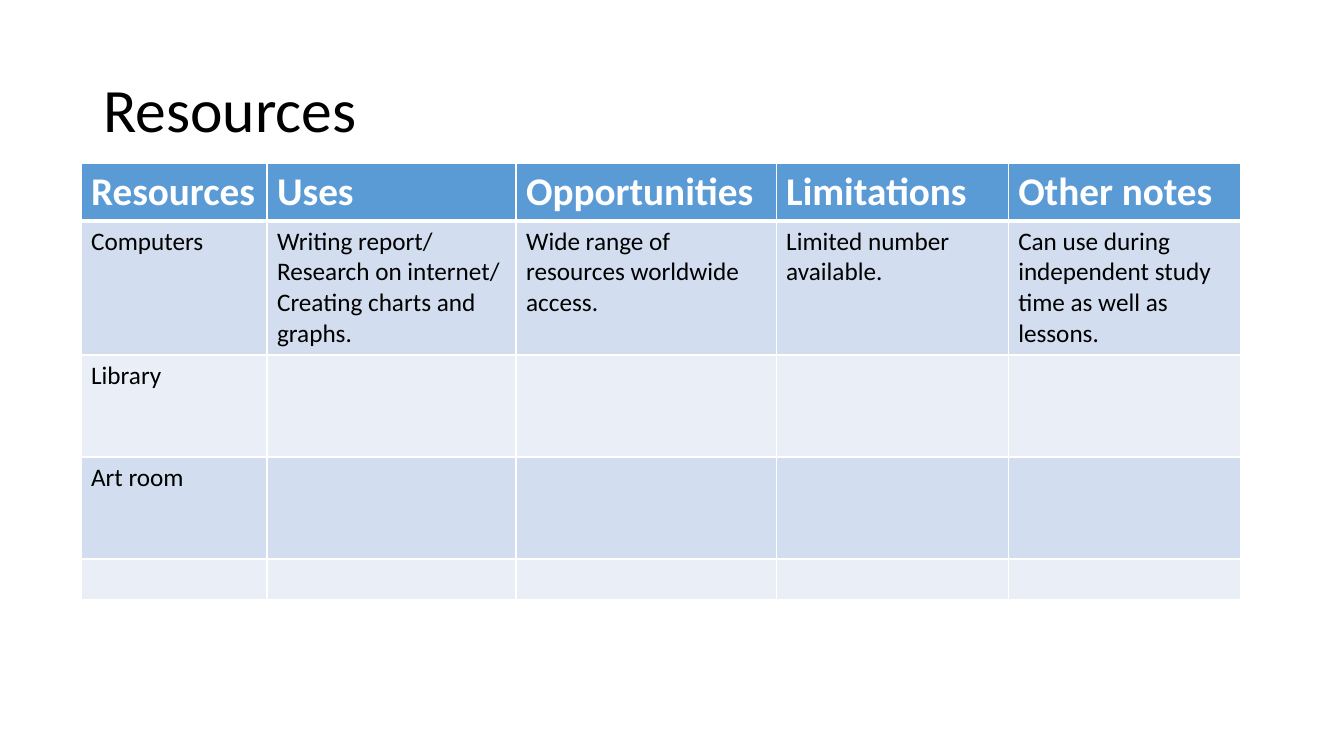
"""Build the Resources slide: a title above a table of resources."""
from lxml import etree
from pptx import Presentation
from pptx import util as u
from pptx.dml.color import RGBColor
from pptx.enum import text
from pptx.oxml import ns

PX = 9071.43
WHITE, BLACK, BLUE = "FFFFFF", "000000", "5B9BD5"
BANDS = ["D2DEEF", "EAEFF7"]


def paint(fill, color):
    fill.solid()
    fill.fore_color.rgb = RGBColor.from_string(color)


def write(frame, words, size=18, color=BLACK, bold=False, space=1.0):
    para = frame.paragraphs[0]
    para.alignment = text.PP_ALIGN.LEFT
    para.line_spacing = space
    para.font.size = u.Pt(size)
    if words:
        run = para.add_run()
        run.text = words
        run.font.name = "Calibri"
        run.font.size = u.Pt(size)
        run.font.bold = bold
        paint(run.font.fill, color)


deck = Presentation()
deck.slide_width, deck.slide_height = u.Inches(13.33), u.Inches(7.5)
slide = deck.slides.add_slide(deck.slide_layouts[5])

title = slide.shapes.title
title.left, title.top, title.width, title.height = [round(n * PX) for n in (93, 40, 1159, 146)]
title.text_frame.vertical_anchor = text.MSO_ANCHOR.MIDDLE
write(title.text_frame, "Resources", size=44, space=0.9)

rows = [
    ["Resources", "Uses", "Opportunities", "Limitations", "Other notes"],
    ["Computers",
     "Writing report/ Research on internet/ Creating charts and graphs.",
     "Wide range of resources worldwide access.",
     "Limited number available.",
     "Can use during independent study time as well as lessons."],
    ["Library"] + [""] * 4,
    ["Art room"] + [""] * 4,
    [""] * 5,
]
widths = [186, 249, 260, 232, 232]
heights = [56, 134, 102, 102, 41]
area = [round(n * PX) for n in (81, 163, sum(widths), sum(heights))]
table = slide.shapes.add_table(len(rows), len(widths), *area).table
for col, width in zip(table.columns, widths):
    col.width = round(width * PX)

for i, row in enumerate(rows):
    table.rows[i].height = round(heights[i] * PX)
    head = i == 0
    for j, words in enumerate(row):
        cell = table.cell(i, j)
        props = cell._tc.get_or_add_tcPr()
        for side in "LRTB":
            thick = 3 if (i, side) in [(0, "B"), (1, "T")] else 1
            line = etree.SubElement(props, ns.qn("a:ln" + side), w=str(u.Pt(thick)))
            solid = etree.SubElement(line, ns.qn("a:solidFill"))
            etree.SubElement(solid, ns.qn("a:srgbClr"), val=WHITE)
        paint(cell.fill, BLUE if head else BANDS[(i - 1) % 2])
        write(cell.text_frame, words, size=28 if head else 18,
              color=WHITE if head else BLACK, bold=head)

deck.save("out.pptx")
